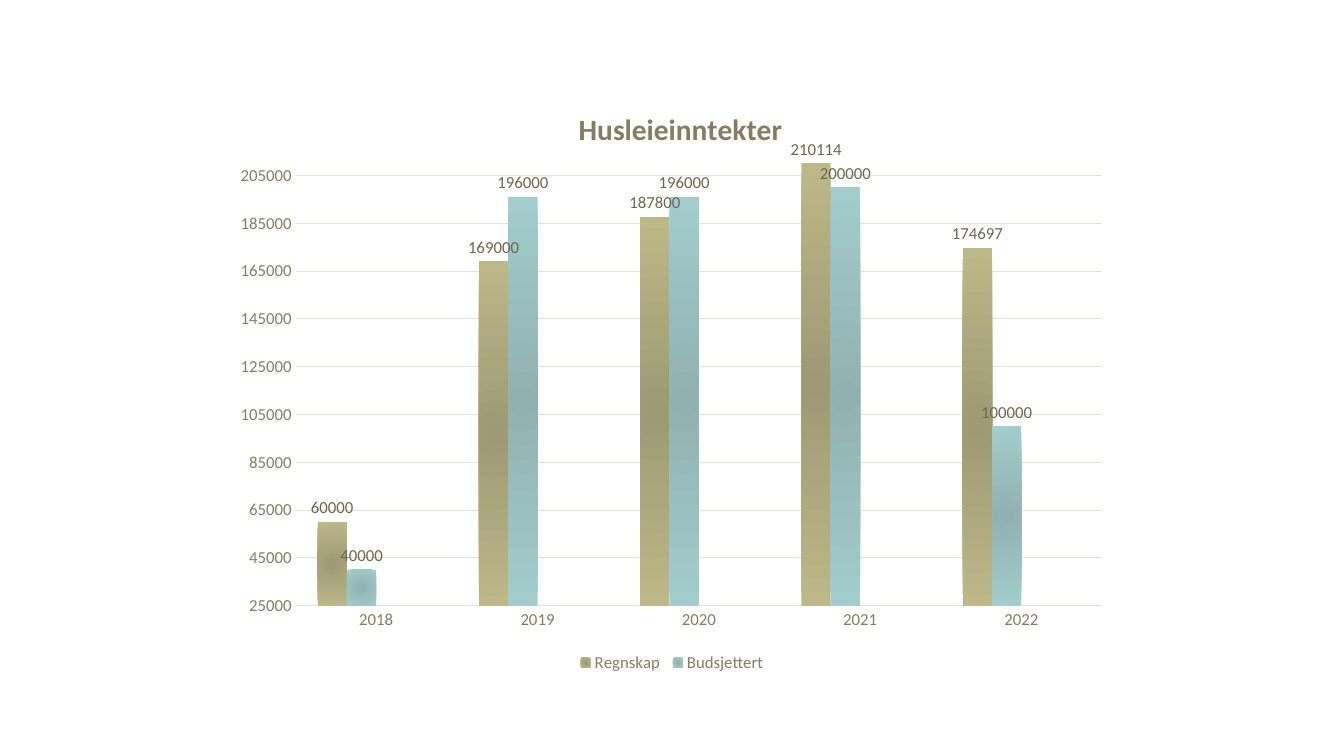
"""Build a slide with a column chart of rental income, accounts against budget."""
from dataclasses import dataclass

from lxml import etree
from pptx import Presentation
from pptx.chart.data import CategoryChartData
from pptx.dml.color import RGBColor
from pptx.enum.chart import XL_CHART_TYPE, XL_LABEL_POSITION, XL_LEGEND_POSITION, XL_TICK_MARK
from pptx.oxml import parse_xml
from pptx.oxml.ns import nsdecls, qn
from pptx.util import Pt

COLUMNS = XL_CHART_TYPE.COLUMN_CLUSTERED
ABOVE_BAR = XL_LABEL_POSITION.OUTSIDE_END
BOTTOM = XL_LEGEND_POSITION.BOTTOM
NO_TICK = XL_TICK_MARK.NONE


@dataclass(frozen=True)
class Theme:
    font: str = "Calibri"
    base: str = "2E2B21"
    muted: str = "867D60"
    label: str = "6D664E"
    grid: str = "E4E2D9"
    title_size: float = 21
    text_size: float = 12
    base_size: float = 10
    gradients: tuple = (("9D9A74", "BDB888"), ("91B1B0", "A2CDCC"),
                        ("C4BD65", "ECE271"), ("8B9892", "A1B2AB"))


YEARS = ("2018", "2019", "2020", "2021", "2022")
INCOME = {
    "Regnskap": (60000, 169000, 187800, 210114, 174697),
    "Budsjettert": (40000, 196000, 196000, 200000, 100000),
    "Series 3": (None,) * len(YEARS),
    "Series 4": (None,) * len(YEARS),
}
UNUSED_SERIES = (2, 3)
VALUE_SCALE = {"minimum_scale": 25000, "maximum_scale": 210000, "major_unit": 20000,
               "has_major_gridlines": True}
AXIS_FORMAT = {"major_tick_mark": NO_TICK, "minor_tick_mark": NO_TICK}
LABEL_FORMAT = {"show_value": True, "position": ABOVE_BAR}
LEGEND_FORMAT = {"position": BOTTOM, "include_in_layout": False}
PLOT_FORMAT = {"gap_width": 150, "overlap": 0, "vary_by_categories": False}
TITLE_PLACE = {"x": 0.39, "y": 0.04}
PLOT_PLACE = {"x": 0.08, "y": 0.14, "w": 0.9, "h": 0.74}
LEGEND_PLACE = {"x": 0.39, "y": 0.95, "w": 0.22, "h": 0.05}


def apply(target, values):
    """Set every attribute named in a dict of format values."""
    for name, value in values.items():
        setattr(target, name, value)


class ChartSlide:
    """Hold the theme and the slide, and draw the parts of a chart."""

    def __init__(self, slide, theme):
        self.slide = slide
        self.theme = theme

    def style_font(self, font, size, color, bold=False):
        """Give a font the theme's typeface with a size and a colour."""
        apply(font, {"name": self.theme.font, "size": Pt(size), "bold": bold})
        font.color.rgb = RGBColor.from_string(color)

    def style_line(self, line, width):
        """Draw a line in the grid colour."""
        line.width = Pt(width)
        line.color.rgb = RGBColor.from_string(self.theme.grid)

    def place(self, part, fractions):
        """Fix a chart part at fractions of the chart's size."""
        layout = part.find(qn("c:layout"))
        if layout is None:
            layout = etree.Element(qn("c:layout"))
            overlay = part.find(qn("c:overlay"))
            if overlay is None:
                part.insert(0, layout)
            else:
                overlay.addprevious(layout)
        manual = etree.SubElement(layout, qn("c:manualLayout"))
        settings = {"xMode": "edge", "yMode": "edge", **fractions}
        if part.tag == qn("c:plotArea"):
            settings = {"layoutTarget": "inner", **settings}
        for name, value in settings.items():
            etree.SubElement(manual, qn(f"c:{name}")).set("val", str(value))

    def column_chart(self, left, top, width, height, years, income):
        """Add the clustered columns with their base font and plot area."""
        data = CategoryChartData()
        data.categories = years
        for name, amounts in income.items():
            data.add_series(name, amounts)
        frame = self.slide.shapes.add_chart(
            COLUMNS, Pt(left), Pt(top), Pt(width), Pt(height), data)
        chart = frame.chart
        self.style_font(chart.font, self.theme.base_size, self.theme.base)
        apply(chart.plots[0], PLOT_FORMAT)
        self.place(chart.element.find(".//" + qn("c:plotArea")), PLOT_PLACE)
        return chart

    def title(self, chart, wording):
        """Add the chart title."""
        chart.has_title = True
        text = chart.chart_title.text_frame
        text.text = wording
        self.style_font(text.paragraphs[0].runs[0].font,
                        self.theme.title_size, self.theme.muted, True)
        self.place(chart.element.find(".//" + qn("c:title")), TITLE_PLACE)

    def axes(self, chart):
        """Format the year axis and the amount axis."""
        year_axis, amount_axis = chart.category_axis, chart.value_axis
        for axis in (year_axis, amount_axis):
            apply(axis, AXIS_FORMAT)
            self.style_font(axis.tick_labels.font, self.theme.text_size, self.theme.muted)
        apply(amount_axis, VALUE_SCALE)
        self.style_line(year_axis.format.line, 1)
        self.style_line(amount_axis.major_gridlines.format.line, 0.75)
        amount_axis.format.line.fill.background()

    def bars(self, chart):
        """Fill each series with a round gradient and label its bars."""
        for series, colors in zip(chart.plots[0].series, self.theme.gradients):
            fill = series.format.fill
            fill.gradient()
            for stop, color, position in zip(fill.gradient_stops, colors, (0, 1)):
                stop.color.rgb = RGBColor.from_string(color)
                stop.position = position
            labels = series.data_labels
            apply(labels, LABEL_FORMAT)
            self.style_font(labels.font, self.theme.text_size, self.theme.label)
        for gradient in chart.element.iter(qn("a:gradFill")):
            gradient.replace(gradient.find(qn("a:lin")), parse_xml(
                f'<a:path {nsdecls("a")} path="circle"><a:fillToRect l="100000" '
                't="100000" r="100000" b="100000"/></a:path>'))

    def legend(self, chart, unused):
        """Add the legend without the unused series."""
        chart.has_legend = True
        apply(chart.legend, LEGEND_FORMAT)
        self.style_font(chart.legend.font, self.theme.text_size, self.theme.muted)
        legend = chart.element.find(".//" + qn("c:legend"))
        self.place(legend, LEGEND_PLACE)
        for index in unused:
            legend.find(qn("c:layout")).addprevious(parse_xml(
                f'<c:legendEntry {nsdecls("c")}><c:idx val="{index}"/>'
                '<c:delete val="1"/></c:legendEntry>'))


def main():
    """Build and save the slide."""
    deck = Presentation()
    apply(deck, {"slide_width": Pt(960), "slide_height": Pt(540)})
    page = ChartSlide(deck.slides.add_slide(deck.slide_layouts[6]), Theme())
    income_chart = page.column_chart(160, 57, 640, 427, YEARS, INCOME)
    page.title(income_chart, "Husleieinntekter")
    page.axes(income_chart)
    page.bars(income_chart)
    page.legend(income_chart, UNUSED_SERIES)
    deck.save("out.pptx")


if __name__ == "__main__":
    main()
